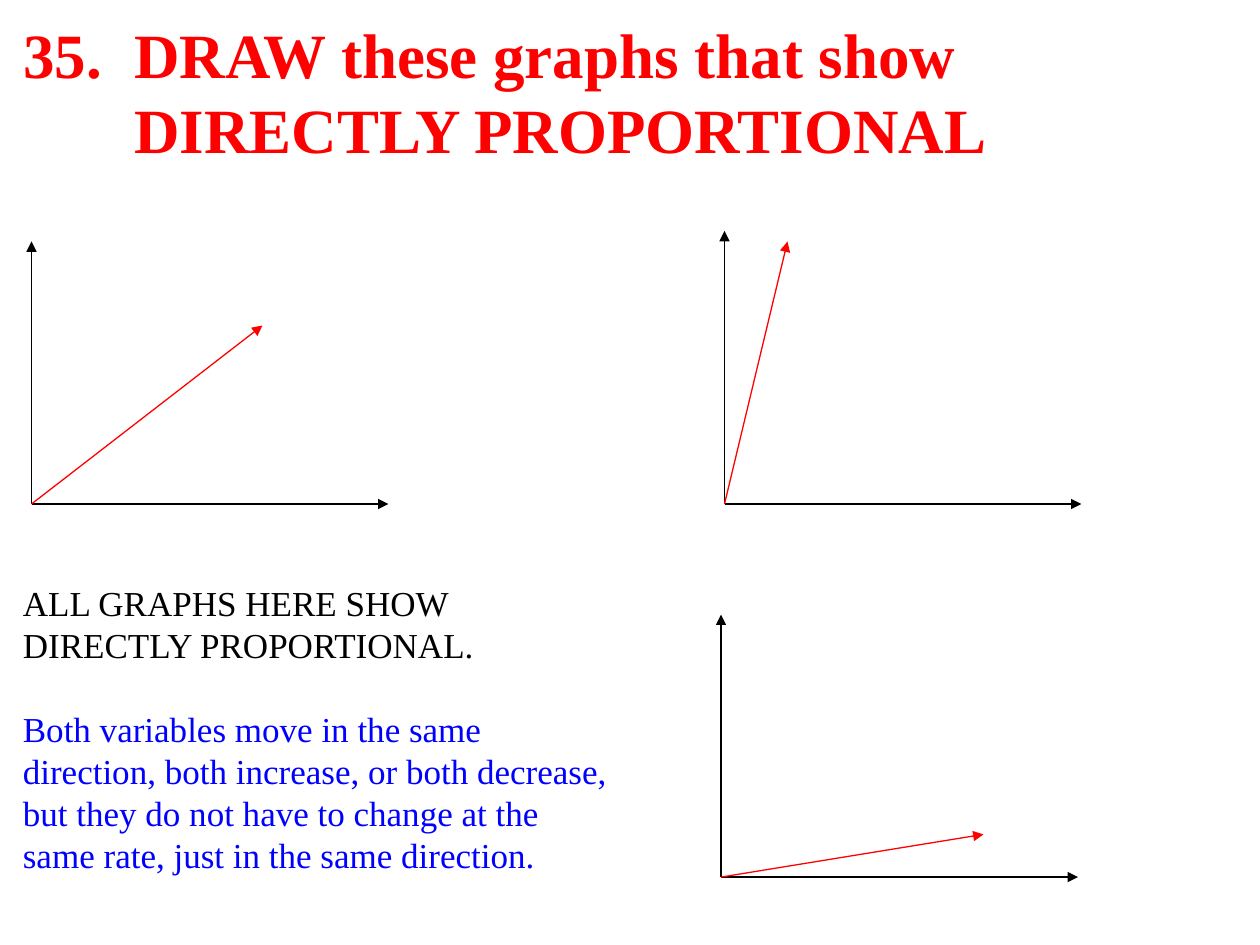
from lxml import etree
from pptx import Presentation
from pptx.dml.color import RGBColor
from pptx.enum import shapes, text
from pptx.oxml import ns
from pptx.util import Pt

COLORS = {"axis": "000000", "curve": "FF0000", "title": "FF0000",
          "body": "000000", "note": "0000FF"}
FONT = "Times New Roman"


def rgb(name):
    return RGBColor.from_string(COLORS[name])


def set_frame(tf, top):
    values = {"word_wrap": True, "auto_size": text.MSO_AUTO_SIZE.NONE,
              "vertical_anchor": text.MSO_ANCHOR.TOP,
              "margin_left": Pt(7.2), "margin_right": Pt(7.2),
              "margin_top": Pt(top), "margin_bottom": Pt(3.6)}
    for key, value in values.items():
        setattr(tf, key, value)


def write(p, content, size, color, bold=False, before=0):
    p.text = content
    for key, value in {"alignment": text.PP_ALIGN.LEFT,
                       "line_spacing": Pt(size * 1.2),
                       "space_before": Pt(before)}.items():
        setattr(p, key, value)
    for r in p.runs:
        for key, value in {"name": FONT, "size": Pt(size), "bold": bold}.items():
            setattr(r.font, key, value)
        r.font.color.rgb = rgb(color)


def add_title(s, left, top, width, height):
    sp = s.shapes.title
    for key, value in {"left": left, "top": top,
                       "width": width, "height": height}.items():
        setattr(sp, key, Pt(value))
    set_frame(sp.text_frame, 5)
    p = sp.text_frame.paragraphs[0]
    write(p, "35.\tDRAW these graphs that show\vDIRECTLY PROPORTIONAL",
          36, "title", bold=True)
    # Hanging indent: the number stands left of both lines
    pPr = p._p.get_or_add_pPr()
    pPr.set("marL", str(Pt(63.5)))
    pPr.set("indent", str(Pt(-63.5)))


def add_arrow(s, start, end, color):
    c = s.shapes.add_connector(shapes.MSO_CONNECTOR.STRAIGHT,
                               *(Pt(v) for v in start + end))
    c.line.width = Pt(0.75)
    c.line.color.rgb = rgb(color)
    tail = etree.SubElement(c.line._get_or_add_ln(), ns.qn("a:tailEnd"))
    tail.set("type", "triangle")
    etree.SubElement(c._element.spPr, ns.qn("a:effectLst"))


def add_graph(s, left, top, width, height, run, rise):
    """Two axes from the lower left corner and a line of slope rise / run."""
    bottom = top + height
    origin = (left, bottom)
    add_arrow(s, origin, (left, top), "axis")
    add_arrow(s, origin, (left + width, bottom), "axis")
    add_arrow(s, origin, (left + run, bottom - rise), "curve")


def add_explanation(s, left, top, width, height):
    sp = s.shapes.add_textbox(Pt(left), Pt(top), Pt(width), Pt(height))
    tf = sp.text_frame
    set_frame(tf, 4.6)
    write(tf.paragraphs[0], "ALL GRAPHS HERE SHOW DIRECTLY PROPORTIONAL.",
          20, "body")
    write(tf.add_paragraph(),
          "Both variables move in the same direction, both increase, or both "
          "decrease, but they do not have to change at the same rate, just in "
          "the same direction.", 20, "note", before=24)


def main():
    prs = Presentation()
    prs.slide_width, prs.slide_height = Pt(720), Pt(540)
    s = prs.slides.add_slide(prs.slide_layouts[5])

    # Heading
    add_title(s, 6, 3.6, 714, 94.3)

    # Graphs: medium, steep and shallow slope
    add_graph(s, 18, 138, 204, 150, run=132, rise=102)
    add_graph(s, 414, 132, 204, 156, run=36, rise=150)
    add_graph(s, 412, 351.2, 204, 150, run=150, rise=24.4)

    # Explanation
    add_explanation(s, 6, 327.6, 352, 177)

    prs.save("out.pptx")


if __name__ == "__main__":
    main()
